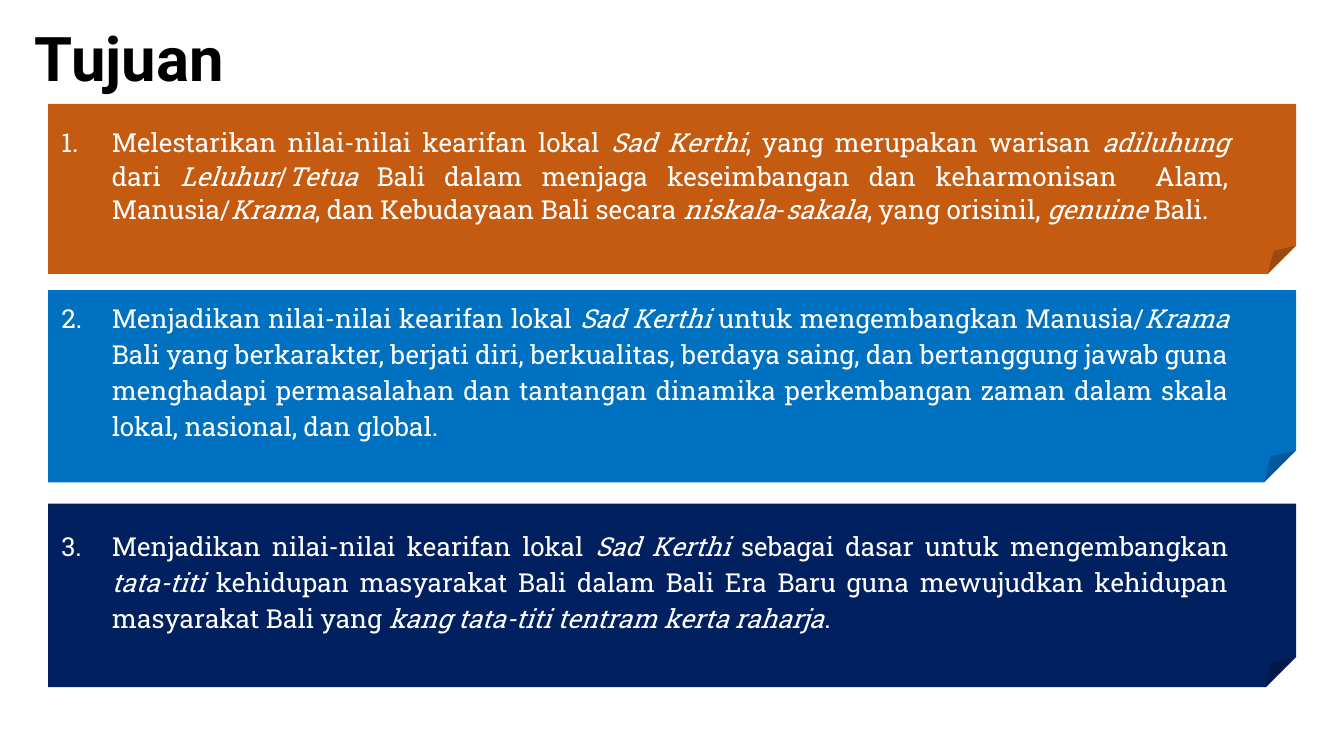
from dataclasses import dataclass

from lxml.etree import SubElement
from pptx import Presentation
from pptx.dml.color import RGBColor
from pptx.enum.shapes import MSO_SHAPE
from pptx.enum.text import MSO_ANCHOR, MSO_AUTO_SIZE, PP_ALIGN
from pptx.oxml.ns import qn
from pptx.util import Pt


@dataclass(frozen=True)
class Theme:
    title_font: str = "Roboto"
    body_font: str = "Roboto Slab"
    title_size: int = 33
    body_size: int = 14
    title_color: str = "000000"
    body_color: str = "FFFFFF"
    orange: str = "C55A11"
    blue: str = "0070C0"
    navy: str = "002060"


theme = Theme()


def add_run(paragraph, text, font, size, color, bold=False, italic=False):
    run = paragraph.add_run()
    run.text = text
    run.font.name = font
    run.font.size = Pt(size)
    run.font.color.rgb = RGBColor.from_string(color)
    run.font.bold = bold
    run.font.italic = italic


def number_paragraph(paragraph, number, indent):
    properties = paragraph._p.get_or_add_pPr()
    properties.set("marL", str(Pt(indent)))
    properties.set("indent", str(-Pt(indent)))
    SubElement(properties, qn("a:buFont"), typeface="+mj-lt")
    SubElement(properties, qn("a:buAutoNum"), type="arabicPeriod", startAt=str(number))


presentation = Presentation()
presentation.slide_width = Pt(720)
presentation.slide_height = Pt(405)
slide = presentation.slides.add_slide(presentation.slide_layouts[5])

title = slide.shapes.title
title.left, title.top, title.width, title.height = Pt(11.5), Pt(-6.5), Pt(620.5), Pt(78.5)
title.text_frame.auto_size = MSO_AUTO_SIZE.NONE
title.text_frame.vertical_anchor = MSO_ANCHOR.MIDDLE
paragraph = title.text_frame.paragraphs[0]
paragraph.alignment = PP_ALIGN.LEFT
paragraph.line_spacing = 0.9
add_run(paragraph, "Tujuan", theme.title_font, theme.title_size, theme.title_color, bold=True)

goals = [
    (55.7, 91, theme.orange, 1.07, 8,
     "Melestarikan nilai-nilai kearifan lokal *Sad Kerthi*, yang merupakan warisan "
     "*adiluhung *dari *Leluhur*/*Tetua* Bali dalam menjaga keseimbangan dan "
     "keharmonisan  Alam, Manusia/*Krama*, dan Kebudayaan Bali secara "
     "*niskala*-*sakala*, yang orisinil, *genuine* Bali."),
    (155.4, 103, theme.blue, 1.15, 8,
     "Menjadikan nilai-nilai kearifan lokal *Sad Kerthi *untuk mengembangkan "
     "Manusia/*Krama* Bali yang berkarakter, berjati diri, berkualitas, berdaya saing, "
     "dan bertanggung jawab guna menghadapi permasalahan dan tantangan dinamika "
     "perkembangan zaman dalam skala lokal, nasional, dan global."),
    (269.9, 98.3, theme.navy, 1.15, 10,
     "Menjadikan nilai-nilai kearifan lokal *Sad Kerthi *sebagai dasar untuk "
     "mengembangkan *tata-titi *kehidupan masyarakat Bali dalam Bali Era Baru guna "
     "mewujudkan kehidupan masyarakat Bali yang *kang tata-titi tentram kerta raharja*."),
]

for number, (top, height, color, line_spacing, space_after, text) in enumerate(goals, 1):
    shape = slide.shapes.add_shape(
        MSO_SHAPE.FOLDED_CORNER, Pt(25.8), Pt(top), Pt(668.6), Pt(height))
    shape.shadow.inherit = False
    shape.fill.solid()
    shape.fill.fore_color.rgb = RGBColor.from_string(color)
    shape.line.fill.background()

    frame = shape.text_frame
    frame.word_wrap = True
    frame.vertical_anchor = MSO_ANCHOR.MIDDLE
    frame.margin_left, frame.margin_right = Pt(7.2), Pt(36)
    frame.margin_top = frame.margin_bottom = Pt(3.6)

    paragraph = frame.paragraphs[0]
    paragraph.alignment = PP_ALIGN.JUSTIFY
    paragraph.line_spacing = line_spacing
    paragraph.space_after = Pt(space_after)
    number_paragraph(paragraph, number, 27)
    for index, segment in enumerate(text.split("*")):
        add_run(paragraph, segment, theme.body_font, theme.body_size, theme.body_color,
                italic=index % 2 == 1)

presentation.save("out.pptx")
